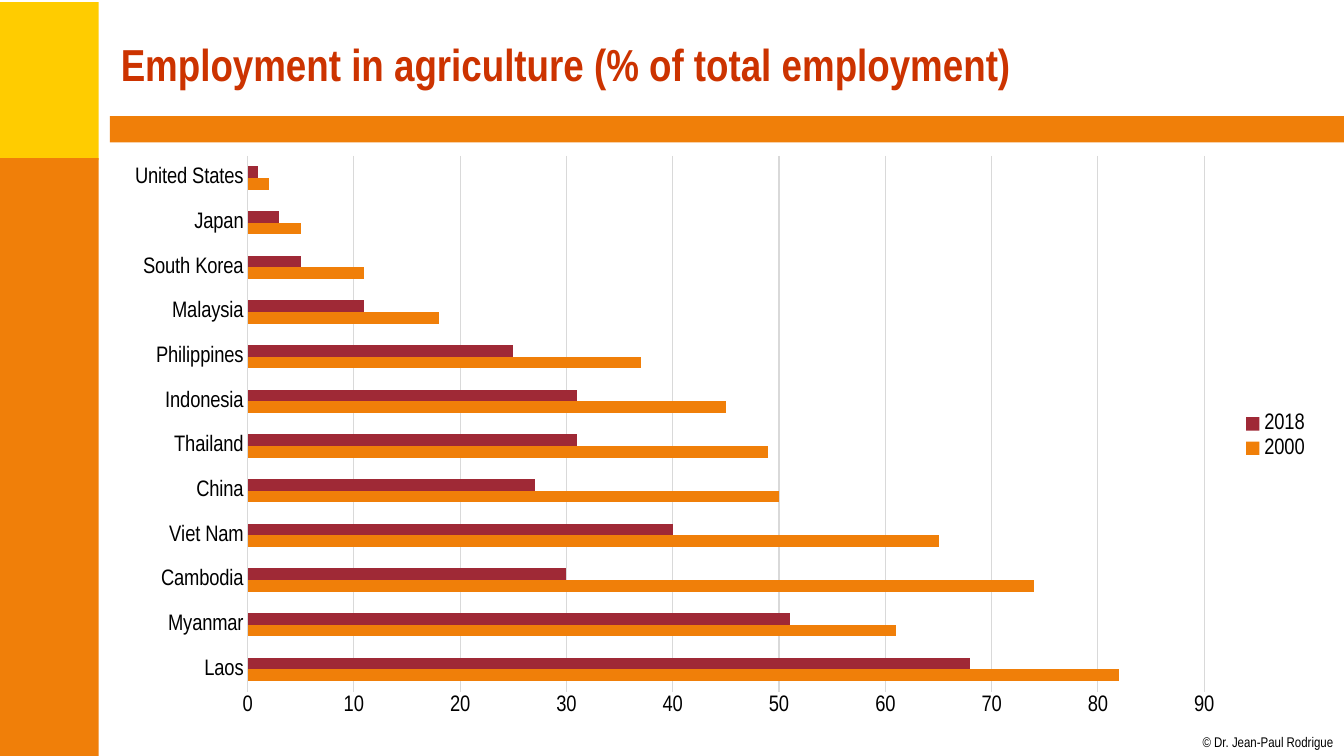
from lxml import etree
from pptx import Presentation
from pptx.chart.data import CategoryChartData
from pptx.dml.color import RGBColor
from pptx.enum.chart import XL_CHART_TYPE as ChartType, XL_LEGEND_POSITION as LegendPos
from pptx.enum.chart import XL_TICK_MARK as TickMark
from pptx.enum.shapes import MSO_SHAPE as Shape
from pptx.enum.text import MSO_ANCHOR as Anchor
from pptx.oxml.ns import qn
from pptx.util import Pt

FONT = "Arial Narrow"
YELLOW, ORANGE, RED = "FFCC00", "F07F09", "9F2936"
TITLE_RED, BLACK, GRID = "CC3300", "000000", "D9D9D9"


def color(hex_code):
    return RGBColor.from_string(hex_code)


def style(font, size, hex_code, bold=False):
    font.name, font.size, font.bold = FONT, Pt(size), bold
    font.color.rgb = color(hex_code)


prs = Presentation()
prs.slide_width, prs.slide_height = Pt(960), Pt(540)
s = prs.slides.add_slide(prs.slide_layouts[6])

# Side panels and title rule
bands = [
    (0, 1.5, 70.5, 113, YELLOW),
    (0, 113, 70.5, 427, ORANGE),
    (78.5, 83, 881.5, 18.7, ORANGE),
]
for x, y, w, h, fill in bands:
    sp = s.shapes.add_shape(Shape.RECTANGLE, Pt(x), Pt(y), Pt(w), Pt(h))
    sp.shadow.inherit = False
    sp.fill.solid()
    sp.fill.fore_color.rgb = color(fill)
    sp.line.fill.background()

# Title
tf = s.shapes.add_textbox(Pt(79.2), Pt(8), Pt(864), Pt(75)).text_frame
tf.word_wrap = True
tf.vertical_anchor = Anchor.MIDDLE
tf.text = "Employment in agriculture (% of total employment)"
style(tf.paragraphs[0].runs[0].font, 32, TITLE_RED, bold=True)

# Copyright line
tf = s.shapes.add_textbox(Pt(859), Pt(524), Pt(94.3), Pt(12.2)).text_frame
tf.margin_left = tf.margin_right = tf.margin_top = tf.margin_bottom = 0
tf.word_wrap = False
tf.text = "© Dr. Jean-Paul Rodrigue"
style(tf.paragraphs[0].runs[0].font, 10, BLACK)

# Employment shares by country
shares = [
    ("Laos", 82, 68),
    ("Myanmar", 61, 51),
    ("Cambodia", 74, 30),
    ("Viet Nam", 65, 40),
    ("China", 50, 27),
    ("Thailand", 49, 31),
    ("Indonesia", 45, 31),
    ("Philippines", 37, 25),
    ("Malaysia", 18, 11),
    ("South Korea", 11, 5),
    ("Japan", 5, 3),
    ("United States", 2, 1),
]
countries, shares_2000, shares_2018 = zip(*shares)
data = CategoryChartData(number_format="0")
data.categories = countries
data.add_series("2000", shares_2000)
data.add_series("2018", shares_2018)

# Bar chart
chart = s.shapes.add_chart(ChartType.BAR_CLUSTERED, Pt(79.2), Pt(103),
                           Pt(864), Pt(417), data).chart
chart.has_title = False
style(chart.font, 16, BLACK)
plot = chart.plots[0]
plot.gap_width, plot.overlap = 182, 0
plot.vary_by_categories = False
for series, fill in zip(plot.series, (ORANGE, RED)):
    series.format.fill.solid()
    series.format.fill.fore_color.rgb = color(fill)

# Axes and gridlines
cat_axis, val_axis = chart.category_axis, chart.value_axis
for axis in (cat_axis, val_axis):
    axis.major_tick_mark = axis.minor_tick_mark = TickMark.NONE
    style(axis.tick_labels.font, 16, BLACK)
val_axis.minimum_scale, val_axis.maximum_scale, val_axis.major_unit = 0, 90, 10
val_axis.has_major_gridlines = True
val_axis.format.line.fill.background()
for line in (cat_axis.format.line, val_axis.major_gridlines.format.line):
    line.color.rgb = color(GRID)
    line.width = Pt(0.75)

# Legend
chart.has_legend = True
chart.legend.position = LegendPos.RIGHT
chart.legend.include_in_layout = False
style(chart.legend.font, 16, BLACK)

# Fixed plot area, as fractions of the chart frame
area = plot._element.getparent()
for old in area.findall(qn("c:layout")):
    area.remove(old)
layout = etree.Element(qn("c:layout"))
area.insert(0, layout)
manual = etree.SubElement(layout, qn("c:manualLayout"))
settings = [("layoutTarget", "inner"), ("xMode", "edge"), ("yMode", "edge"),
            ("x", "0.113"), ("y", "0.02"), ("w", "0.791"), ("h", "0.918")]
for tag, val in settings:
    etree.SubElement(manual, qn("c:" + tag)).set("val", val)

prs.save("out.pptx")
